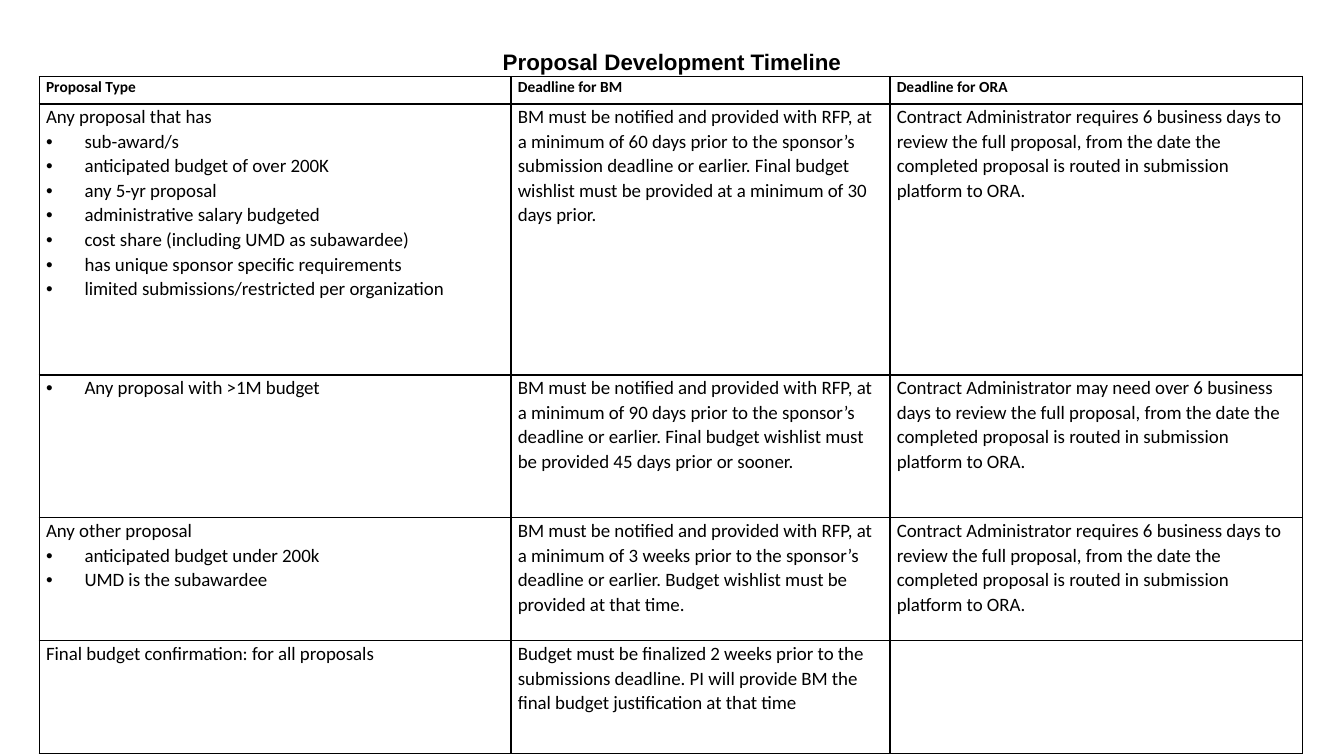
from lxml.etree import SubElement
from pptx import Presentation
from pptx.dml.color import RGBColor
from pptx.enum.text import MSO_ANCHOR, PP_ALIGN
from pptx.oxml.ns import qn
from pptx.util import Cm, Pt

BLACK, WHITE = "000000", "FFFFFF"
HEAD = {"name": "Arial", "size": Pt(16), "bold": True}
LABEL = {"name": "Calibri", "size": Pt(11), "bold": True}
BODY = {"name": "Calibri", "size": Pt(13.5), "bold": False}
INSET = {"margin_left": Cm(0.17), "margin_right": Cm(0.17),
         "margin_top": 0, "margin_bottom": 0}
INDENT = Cm(0.97)


def color(code):
    return RGBColor.from_string(code)


def write(para, text, look, space):
    """Put one styled run in a paragraph; a leading bullet becomes a list mark."""
    para.line_spacing = space
    if text.startswith("•"):
        props = para._p.get_or_add_pPr()
        props.set("marL", str(INDENT))
        props.set("indent", str(-INDENT))
        SubElement(props, qn("a:buFont")).set("typeface", "Arial")
        SubElement(props, qn("a:buChar")).set("char", "•")
    run = para.add_run()
    run.text = text.lstrip("• ")
    for key, value in look.items():
        setattr(run.font, key, value)
    run.font.color.rgb = color(BLACK)


review = ("Contract Administrator {} the full proposal, from the date the completed "
          "proposal is routed in submission platform to ORA.")
notice = "BM must be notified and provided with RFP, at a minimum of {}"
six = review.format("requires 6 business days to review")

rows = [
    (0.69, ["Proposal Type"], "Deadline for BM", "Deadline for ORA"),
    (6.83, ["Any proposal that has",
            "• sub-award/s",
            "• anticipated budget of over 200K",
            "• any 5-yr proposal",
            "• administrative salary budgeted",
            "• cost share (including UMD as subawardee)",
            "• has unique sponsor specific requirements",
            "• limited submissions/restricted per organization"],
     notice.format("60 days prior to the sponsor’s submission deadline or earlier. "
                   "Final budget wishlist must be provided at a minimum of 30 days prior."),
     six),
    (3.6, ["• Any proposal with >1M budget"],
     notice.format("90 days prior to the sponsor’s deadline or earlier. "
                   "Final budget wishlist must be provided 45 days prior or sooner."),
     review.format("may need over 6 business days to review")),
    (3.1, ["Any other proposal",
           "• anticipated budget under 200k",
           "• UMD is the subawardee"],
     notice.format("3 weeks prior to the sponsor’s deadline or earlier. "
                   "Budget wishlist must be provided at that time."),
     six),
    (2.84, ["Final budget confirmation: for all proposals"],
     "Budget must be finalized 2 weeks prior to the submissions deadline. "
     "PI will provide BM the final budget justification at that time",
     ""),
]
widths = [11.89, 9.55, 10.39]

deck = Presentation()
deck.slide_width, deck.slide_height = Cm(33.87), Cm(19.05)
slide = deck.slides.add_slide(deck.slide_layouts[6])

title = slide.shapes.add_textbox(Cm(2.33), Cm(1.02), Cm(29.21), Cm(1.14)).text_frame
title.word_wrap = True
title.vertical_anchor = MSO_ANCHOR.MIDDLE
title.paragraphs[0].alignment = PP_ALIGN.CENTER
write(title.paragraphs[0], "Proposal Development Timeline", HEAD, 0.9)

table = slide.shapes.add_table(
    len(rows), len(widths), Cm(0.99), Cm(1.93),
    Cm(sum(widths)), Cm(sum(row[0] for row in rows))).table
table.first_row = table.horz_banding = False
for column, width in zip(table.columns, widths):
    column.width = Cm(width)

for r, (height, kinds, *dates) in enumerate(rows):
    table.rows[r].height = Cm(height)
    for c, lines in enumerate([kinds] + [[date] for date in dates]):
        cell = table.cell(r, c)
        for key, value in INSET.items():
            setattr(cell, key, value)
        props = cell._tc.get_or_add_tcPr()
        for side in ("lnL", "lnR", "lnT", "lnB"):
            edge = SubElement(props, qn("a:" + side), w=str(Pt(1)))
            fill = SubElement(edge, qn("a:solidFill"))
            SubElement(fill, qn("a:srgbClr"), val=BLACK)
        cell.fill.solid()
        cell.fill.fore_color.rgb = color(WHITE)
        frame = cell.text_frame
        for i, line in enumerate(lines):
            para = frame.add_paragraph() if i else frame.paragraphs[0]
            if line:
                write(para, line, BODY if r else LABEL, 1.07)

deck.save("out.pptx")
